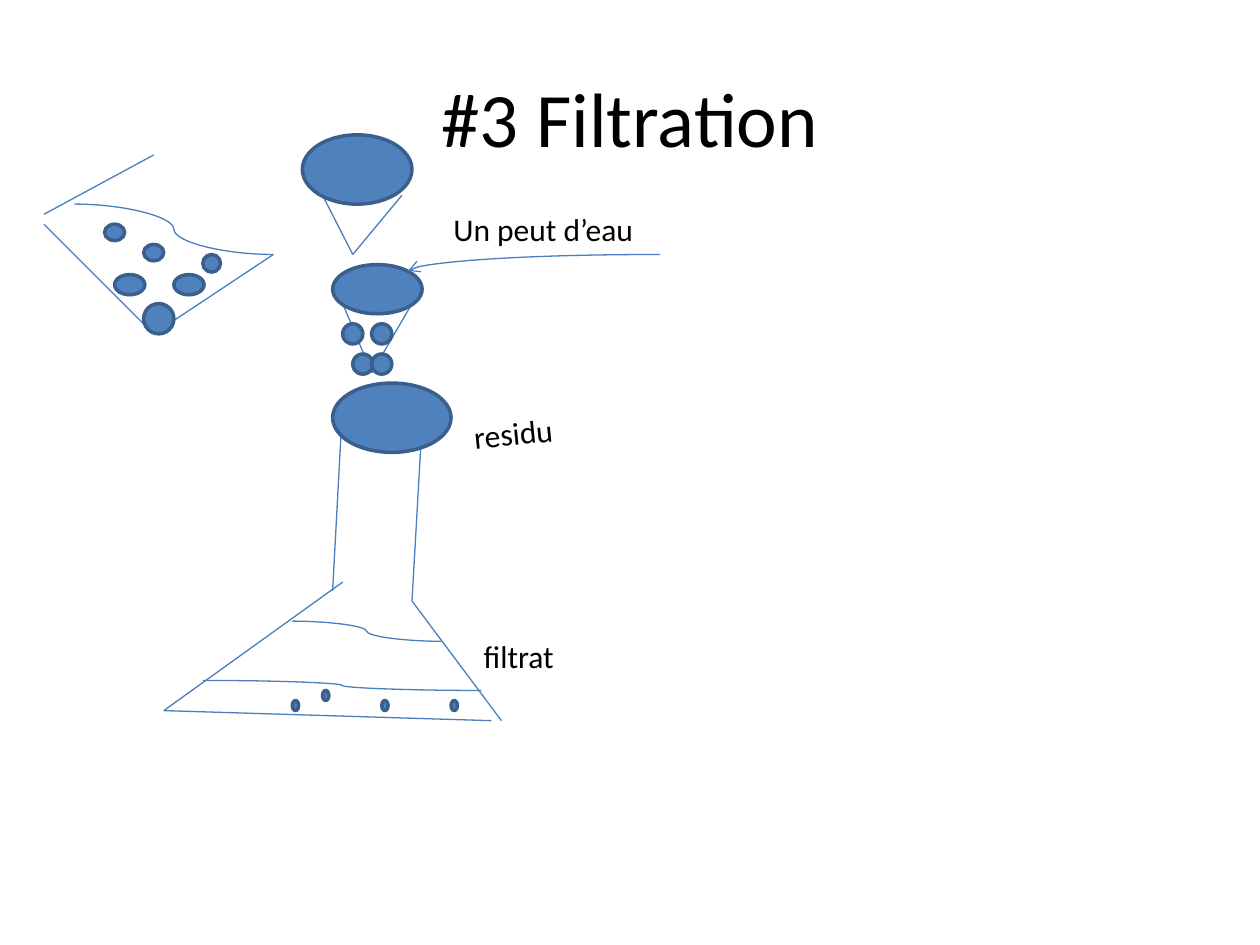
from pptx import Presentation
from pptx.dml.color import RGBColor
from pptx.enum.shapes import MSO_CONNECTOR, MSO_SHAPE
from pptx.enum.text import MSO_ANCHOR, PP_ALIGN
from pptx.oxml.ns import qn
from pptx.util import Inches, Pt
from lxml import etree

STRAIGHT, CURVE = MSO_CONNECTOR.STRAIGHT, MSO_CONNECTOR.CURVE
ELLIPSE = MSO_SHAPE.OVAL
MIDDLE, TOP = MSO_ANCHOR.MIDDLE, MSO_ANCHOR.TOP
CENTER, LEFT = PP_ALIGN.CENTER, PP_ALIGN.LEFT


def color(value):
    return RGBColor.from_string(value)


def add_line(kind, points):
    connector = slide.shapes.add_connector(kind, *[Inches(value) for value in points])
    connector.line.color.rgb = color("4B7EBC")
    connector.line.width = Pt(0.75)
    etree.SubElement(connector._element.spPr, qn("a:effectLst"))
    return connector


presentation = Presentation()
presentation.slide_width = Inches(10)
presentation.slide_height = Inches(7.5)
slide = presentation.slides.add_slide(presentation.slide_layouts[6])

# Outlines of the flask, the two funnels and the filter paper
straight_lines = [
    # Flask
    (2.72, 4.62, 1.3, 5.64),
    (1.3, 5.64, 3.9, 5.72),
    (3.98, 5.72, 3.27, 4.77),
    (3.27, 4.77, 3.35, 3.36),
    (2.64, 4.69, 2.72, 3.2),
    # Lower funnel
    (2.95, 2.96, 2.72, 2.41),
    (2.95, 2.96, 3.27, 2.41),
    # Upper funnel
    (2.8, 2.02, 2.56, 1.55),
    (2.8, 2.02, 3.19, 1.55),
    # Filter paper
    (1.22, 1.23, 0.35, 1.7),
    (0.35, 1.78, 1.22, 2.65),
    (1.22, 2.65, 2.17, 2.02),
]
for points in straight_lines:
    add_line(STRAIGHT, points)

# Liquid surfaces in the paper and the flask
for points in [
    (0.59, 1.62, 2.17, 2.02),
    (1.61, 5.4, 3.82, 5.48),
    (2.32, 4.93, 3.5, 5.09),
]:
    add_line(CURVE, points)

# Vessel openings and particles: width, height, top left corners
ellipses = [
    (0.94, 0.55, [(2.64, 3.04)]),
    (0.71, 0.39, [(2.64, 2.1)]),
    (0.87, 0.55, [(2.4, 1.07)]),
    (0.24, 0.16, [(0.91, 2.18), (1.38, 2.18)]),
    (0.24, 0.24, [(1.14, 2.41)]),
    (0.16, 0.13, [(0.83, 1.78), (1.14, 1.94)]),
    (0.14, 0.14, [(1.61, 2.02)]),
    (0.05, 0.08, [(2.32, 5.56), (2.56, 5.48), (3.03, 5.56), (3.58, 5.56)]),
    (0.16, 0.16, [(2.72, 2.57), (2.95, 2.57), (2.8, 2.81), (2.95, 2.81)]),
]
for width, height, corners in ellipses:
    for left, top in corners:
        shape = slide.shapes.add_shape(
            ELLIPSE, Inches(left), Inches(top), Inches(width), Inches(height))
        shape.shadow.inherit = False
        shape.fill.solid()
        shape.fill.fore_color.rgb = color("4F81BD")
        shape.line.color.rgb = color("3A5F8C")
        shape.line.width = Pt(2)

# Water arrow: a single bend with an open head
arrow = add_line(CURVE, (5.24, 2.02, 3.24, 2.15))
arrow._element.spPr.find(qn("a:prstGeom")).set("prst", "curvedConnector2")
etree.SubElement(arrow.line._get_or_add_ln(), qn("a:tailEnd"), type="arrow")

# Title and labels: text, box, rotation, size, alignment, anchor
texts = [
    ("#3 Filtration", (0.5, 0.3, 9, 1.25), 0, 44, CENTER, MIDDLE),
    ("Un peut d’eau", (3.5, 1.62, 1.97, 0.4), 0, 18, LEFT, TOP),
    ("residu", (3.66, 3.2, 1.57, 0.4), 354.3, 18, LEFT, TOP),
    ("filtrat", (3.74, 5.01, 1.42, 0.4), 0, 18, LEFT, TOP),
]
for text, box, rotation, size, alignment, anchor in texts:
    text_box = slide.shapes.add_textbox(*[Inches(value) for value in box])
    text_box.rotation = rotation
    text_box.text_frame.word_wrap = True
    text_box.text_frame.vertical_anchor = anchor
    paragraph = text_box.text_frame.paragraphs[0]
    paragraph.alignment = alignment
    run = paragraph.add_run()
    run.text = text
    run.font.name = "Calibri"
    run.font.size = Pt(size)
    run.font.color.rgb = color("000000")

presentation.save("out.pptx")
